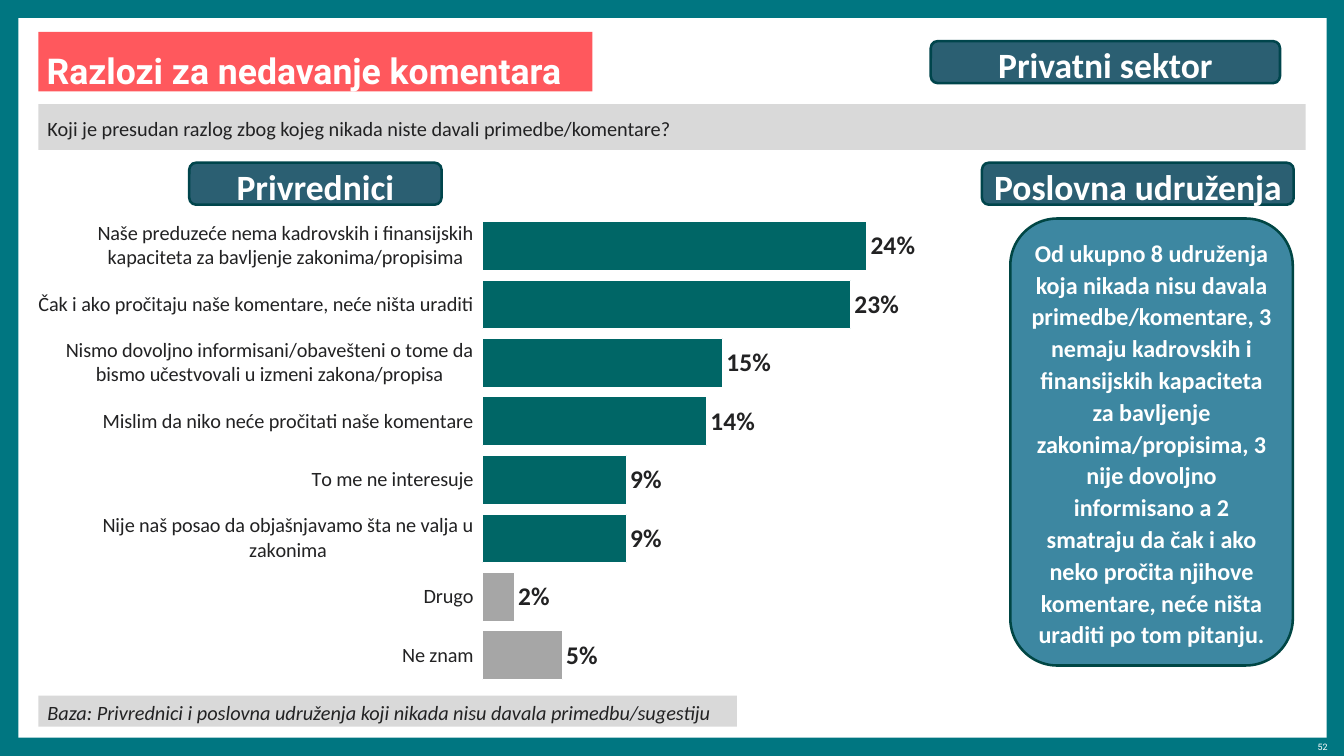
from dataclasses import dataclass
from typing import Any, Optional

from pptx import Presentation
from pptx.chart.chart import Chart
from pptx.chart.data import CategoryChartData
from pptx.dml.color import RGBColor
from pptx.enum.chart import XL_CHART_TYPE, XL_LABEL_POSITION, XL_TICK_MARK
from pptx.enum.shapes import MSO_SHAPE
from pptx.enum.text import MSO_ANCHOR, PP_ALIGN
from pptx.oxml import parse_xml
from pptx.oxml.ns import nsdecls, qn
from pptx.slide import Slide
from pptx.util import Emu, Inches, Pt

SLIDE_WIDTH, SLIDE_HEIGHT = Inches(14.7), Inches(8.27)
COLUMN, ROW = SLIDE_WIDTH / 147, SLIDE_HEIGHT / 82.7


@dataclass(frozen=True)
class Theme:
    frame: str = "007681"
    white: str = "FFFFFF"
    accent: str = "FF585D"
    band: str = "D9D9D9"
    ink: str = "222223"
    pill: str = "2B5F72"
    pill_edge: str = "00454C"
    callout: str = "3D87A1"
    callout_edge: str = "004644"
    bar: str = "006666"
    muted_bar: str = "A6A6A6"
    body_font: str = "Calibri"
    title_font: str = "Roboto"
    heading_size: int = 28
    value_size: int = 20
    callout_size: int = 19
    body_size: int = 16
    number_size: int = 7


THEME = Theme()


@dataclass(frozen=True)
class Area:
    """Left, top, width in columns and height in rows."""
    left: float
    top: float
    width: float
    height: float

    def lengths(self) -> tuple[Emu, ...]:
        return (Emu(round(self.left * COLUMN)), Emu(round(self.top * ROW)),
                Emu(round(self.width * COLUMN)), Emu(round(self.height * ROW)))


@dataclass(frozen=True)
class Style:
    font: dict[str, Any]
    ink: str
    paragraph: dict[str, Any]
    margins: tuple[float, float, float, float]
    fill: Optional[str] = None
    edge: Optional[str] = None
    rounded: bool = False
    wrap: bool = True


@dataclass(frozen=True)
class Label:
    text: str
    area: Area
    style: Style


@dataclass(frozen=True)
class Reason:
    text: str
    percent: int
    muted: bool = False


def text_font(size: int, name: str = THEME.body_font, bold: bool = False,
              italic: bool = False) -> dict[str, Any]:
    return {"size": Pt(size), "name": name, "bold": bold, "italic": italic}


BAND_PARAGRAPH = {"alignment": PP_ALIGN.LEFT, "line_spacing": 1.1,
                  "space_before": Pt(6), "space_after": Pt(6)}
CENTRED = {"alignment": PP_ALIGN.CENTER, "line_spacing": 1.1, "space_before": Pt(24)}
BAND_MARGINS = (0.1, 0, 0.1, 0)
TIGHT_MARGINS = (0.04,) * 4

TITLE = Style(text_font(THEME.heading_size, THEME.title_font, bold=True), THEME.white,
              {"alignment": PP_ALIGN.LEFT, "line_spacing": Pt(41)},
              (0.09, 0.08, 0.09, 0), THEME.accent, wrap=False)
QUESTION = Style(text_font(THEME.body_size), THEME.ink, BAND_PARAGRAPH,
                 BAND_MARGINS, THEME.band)
BASE = Style(text_font(THEME.body_size, italic=True), THEME.ink, BAND_PARAGRAPH,
             BAND_MARGINS, THEME.band)
PILL = Style(text_font(THEME.heading_size, bold=True), THEME.white, CENTRED,
             TIGHT_MARGINS, THEME.pill, THEME.pill_edge, rounded=True)
CALLOUT = Style(text_font(THEME.callout_size, bold=True), THEME.white, CENTRED,
                TIGHT_MARGINS, THEME.callout, THEME.callout_edge, rounded=True)
NUMBER = Style(text_font(THEME.number_size, THEME.title_font), THEME.white,
               {"alignment": PP_ALIGN.RIGHT, "line_spacing": 1.1}, (0, 0, 0, 0))

PANEL_AREA = Area(2, 2, 143.1, 78.7)
CHART_AREA = Area(4.2, 23.7, 103.2, 51.2)
PLOT_SHARES = {"x": 0.47, "y": 0, "w": 0.51, "h": 1}

LABELS = [
    Label("52", Area(137.3, 81, 7.9, 1.3), NUMBER),
    Label("Razlozi za nedavanje komentara", Area(4.2, 3.5, 60.6, 6.5), TITLE),
    Label("Baza: Privrednici i poslovna udruženja koji nikada nisu davala "
          "primedbu/sugestiju", Area(4.2, 76.1, 76.4, 3.4), BASE),
    Label("Koji je presudan razlog zbog kojeg nikada niste davali primedbe/komentare?",
          Area(4.2, 11.4, 138.6, 5), QUESTION),
    Label("Od ukupno 8 udruženja koja nikada nisu davala primedbe/komentare, 3 nemaju "
          "kadrovskih i finansijskih kapaciteta za bavljenje zakonima/propisima, 3 nije "
          "dovoljno informisano a 2 smatraju da čak i ako neko pročita njihove komentare, "
          "neće ništa uraditi po tom pitanju.", Area(110.5, 23.9, 30.9, 48.9), CALLOUT),
    Label("Privrednici", Area(20.7, 17.8, 27.6, 4.6), PILL),
    Label("Privatni sektor", Area(101.8, 4.5, 38.2, 4.6), PILL),
    Label("Poslovna udruženja", Area(107.4, 17.8, 34.1, 4.6), PILL),
]

REASONS = [
    Reason("Naše preduzeće nema kadrovskih i finansijskih kapaciteta za bavljenje "
           "zakonima/propisima", 24),
    Reason("Čak i ako pročitaju naše komentare, neće ništa uraditi", 23),
    Reason("Nismo dovoljno informisani/obavešteni o tome da bismo učestvovali u izmeni "
           "zakona/propisa", 15),
    Reason("Mislim da niko neće pročitati naše komentare", 14),
    Reason("To me ne interesuje", 9),
    Reason("Nije naš posao da objašnjavamo šta ne valja u zakonima", 9),
    Reason("Drugo", 2, muted=True),
    Reason("Ne znam", 5, muted=True),
]


def apply_format(target: Any, values: dict[str, Any]) -> None:
    for name, value in values.items():
        setattr(target, name, value)


def paint(fill: Any, color: str) -> None:
    fill.solid()
    fill.fore_color.rgb = RGBColor.from_string(color)


def add_box(page: Slide, area: Area, fill: Optional[str], edge: Optional[str] = None,
            rounded: bool = False) -> Any:
    if fill is None:
        return page.shapes.add_textbox(*area.lengths())
    kind = MSO_SHAPE.ROUNDED_RECTANGLE if rounded else MSO_SHAPE.RECTANGLE
    box = page.shapes.add_shape(kind, *area.lengths())
    box.shadow.inherit = False
    paint(box.fill, fill)
    if edge:
        paint(box.line.fill, edge)
        box.line.width = Pt(2)
    else:
        box.line.fill.background()
    return box


def add_label(page: Slide, label: Label) -> None:
    style = label.style
    frame = add_box(page, label.area, style.fill, style.edge, style.rounded).text_frame
    sides = ("margin_left", "margin_top", "margin_right", "margin_bottom")
    apply_format(frame, dict(zip(sides, map(Inches, style.margins))))
    apply_format(frame, {"word_wrap": style.wrap, "vertical_anchor": MSO_ANCHOR.MIDDLE})
    para = frame.paragraphs[0]
    apply_format(para, style.paragraph)
    span = para.add_run()
    span.text = label.text
    apply_format(span.font, style.font)
    span.font.color.rgb = RGBColor.from_string(style.ink)


def place_plot(chart: Chart, shares: dict[str, float]) -> None:
    plot_area = chart.element.find(qn("c:chart")).find(qn("c:plotArea"))
    for layout in plot_area.findall(qn("c:layout")):
        plot_area.remove(layout)
    sizes = "".join(f'<c:{side} val="{share}"/>' for side, share in shares.items())
    plot_area.insert(0, parse_xml(
        f'<c:layout {nsdecls("c")}><c:manualLayout><c:layoutTarget val="inner"/>'
        f'<c:xMode val="edge"/><c:yMode val="edge"/>{sizes}</c:manualLayout></c:layout>'))


def add_reason_chart(page: Slide, area: Area, reasons: list[Reason]) -> None:
    data = CategoryChartData()
    data.categories = [reason.text for reason in reasons]
    data.add_series("Series 1", [reason.percent for reason in reasons])
    chart = page.shapes.add_chart(XL_CHART_TYPE.BAR_CLUSTERED, *area.lengths(), data).chart
    apply_format(chart, {"has_legend": False, "has_title": False})
    apply_format(chart.font, text_font(THEME.body_size))
    chart.font.color.rgb = RGBColor.from_string(THEME.ink)
    apply_format(chart.value_axis, {"minimum_scale": 0, "maximum_scale": 30,
                                    "has_major_gridlines": False, "visible": False})
    apply_format(chart.category_axis, {"reverse_order": True,
                                       "major_tick_mark": XL_TICK_MARK.OUTSIDE})
    chart.category_axis.format.line.fill.background()

    plot = chart.plots[0]
    apply_format(plot, {"gap_width": 20, "vary_by_categories": False,
                        "has_data_labels": True})
    apply_format(plot.data_labels, {"show_value": True, "number_format": '#"%"',
                                    "number_format_is_linked": False,
                                    "position": XL_LABEL_POSITION.OUTSIDE_END})
    apply_format(plot.data_labels.font, text_font(THEME.value_size, bold=True))
    plot.data_labels.font.color.rgb = RGBColor.from_string(THEME.ink)
    series = plot.series[0]
    bars = [(series.format, THEME.bar)]
    bars += [(series.points[index].format, THEME.muted_bar)
             for index, reason in enumerate(reasons) if reason.muted]
    for bar, color in bars:
        paint(bar.fill, color)
        paint(bar.line.fill, THEME.white)
        bar.line.width = Pt(0.75)
    place_plot(chart, PLOT_SHARES)


def main() -> None:
    deck = Presentation()
    apply_format(deck, {"slide_width": SLIDE_WIDTH, "slide_height": SLIDE_HEIGHT})
    page = deck.slides.add_slide(deck.slide_layouts[6])
    paint(page.background.fill, THEME.frame)
    add_box(page, PANEL_AREA, THEME.white)
    add_reason_chart(page, CHART_AREA, REASONS)
    for label in LABELS:
        add_label(page, label)
    deck.save("out.pptx")


if __name__ == "__main__":
    main()
